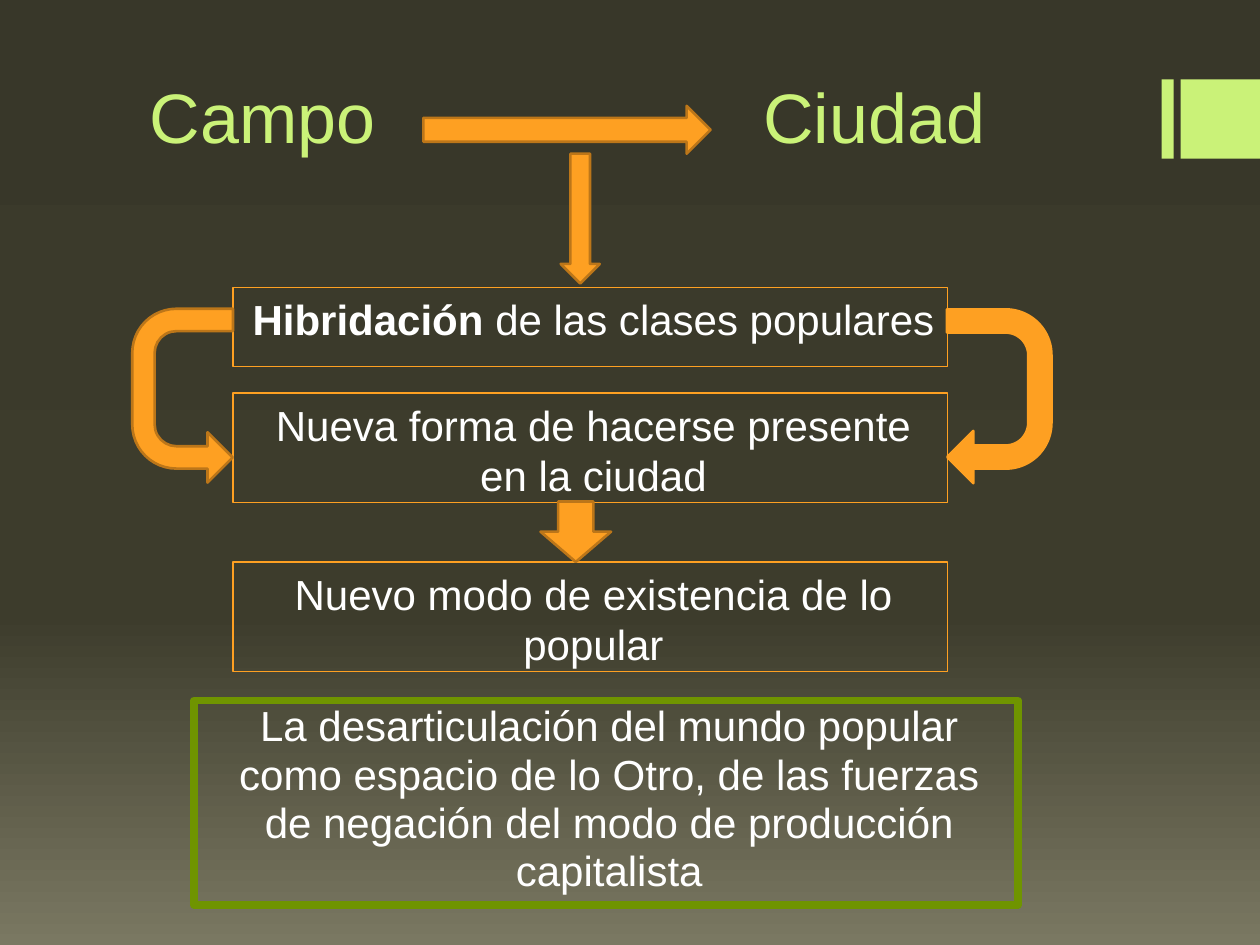
from copy import deepcopy

from pptx import Presentation
from pptx.dml.color import RGBColor
from pptx.enum.shapes import MSO_SHAPE as Shape
from pptx.enum.text import MSO_ANCHOR as Anchor, PP_ALIGN as Align
from pptx.oxml.ns import qn
from pptx.util import Inches, Pt

# Grid of 100 columns by 75 rows on a 10 x 7.5 inch slide
COLUMNS, ROWS = 100, 75
SLIDE_WIDTH, SLIDE_HEIGHT = Inches(10), Inches(7.5)

FONT = "Arial"
LIME = RGBColor(0xCA, 0xF2, 0x78)
ORANGE = RGBColor(0xFE, 0xA0, 0x22)
DARK_ORANGE = RGBColor(0xBC, 0x76, 0x19)
GREEN = RGBColor(0x6F, 0x94, 0x00)
WHITE = RGBColor(0xFF, 0xFF, 0xFF)
BACKGROUND_STOPS = [
    (0, RGBColor(0x38, 0x37, 0x29)),
    (0.65, RGBColor(0x3D, 0x3C, 0x2C)),
    (1, RGBColor(0x7A, 0x78, 0x62)),
]
UTURN_ADJUSTMENTS = (0.222, 0.25, 0.25, 0.438, 0.997)


def place(column, row, columns, rows):
    """Turn a grid area into left, top, width and height."""
    return (
        round(SLIDE_WIDTH * column / COLUMNS),
        round(SLIDE_HEIGHT * row / ROWS),
        round(SLIDE_WIDTH * columns / COLUMNS),
        round(SLIDE_HEIGHT * rows / ROWS),
    )


def paint_background(slide):
    fill = slide.background.fill
    fill.gradient()
    fill.gradient_angle = 270
    stop_list = slide.element.find(".//" + qn("a:gsLst"))
    stop_list.append(deepcopy(stop_list[-1]))
    for stop, (position, color) in zip(fill.gradient_stops, BACKGROUND_STOPS):
        stop.position = position
        stop.color.rgb = color


def add_shape(slide, kind, area, fill=None, line=None, line_width=1.5):
    shape = slide.shapes.add_shape(kind, *place(*area))
    shape.shadow.inherit = False
    if fill is None:
        shape.fill.background()
    else:
        shape.fill.solid()
        shape.fill.fore_color.rgb = fill
    if line is None:
        shape.line.fill.background()
    else:
        shape.line.color.rgb = line
        shape.line.width = Pt(line_width)
    return shape


def set_font(paragraph, size, color):
    paragraph.font.name = FONT
    paragraph.font.size = Pt(size)
    paragraph.font.color.rgb = color


def add_heading(slide, column, text):
    box = slide.shapes.add_textbox(*place(column, 2.9, 21.9, 10.1))
    frame = box.text_frame
    frame.word_wrap = True
    frame.vertical_anchor = Anchor.BOTTOM
    paragraph = frame.paragraphs[0]
    paragraph.text = text
    set_font(paragraph, 40, LIME)


def add_statement(slide, area, text, bold_start="", line=ORANGE, line_width=0.75):
    box = add_shape(slide, Shape.RECTANGLE, area, line=line, line_width=line_width)
    frame = box.text_frame
    frame.word_wrap = True
    frame.vertical_anchor = Anchor.TOP
    paragraph = frame.paragraphs[0]
    paragraph.alignment = Align.CENTER
    paragraph._p.get_or_add_pPr().set("marL", str(Inches(0.05)))
    set_font(paragraph, 24, WHITE)
    if bold_start:
        run = paragraph.add_run()
        run.text = bold_start
        run.font.bold = True
    paragraph.add_run().text = text
    return frame


def add_uturn(slide, area, line, flipped=False):
    arrow = add_shape(slide, Shape.U_TURN_ARROW, area, ORANGE, line)
    for index, value in enumerate(UTURN_ADJUSTMENTS):
        arrow.adjustments[index] = value
    arrow.rotation = 90
    if flipped:
        arrow.element.spPr.find(qn("a:xfrm")).set("flipV", "1")


def main():
    presentation = Presentation()
    presentation.slide_width, presentation.slide_height = SLIDE_WIDTH, SLIDE_HEIGHT
    slide = presentation.slides.add_slide(presentation.slide_layouts[6])
    paint_background(slide)

    # Marker at the right edge
    for column, columns in ((92.2, 0.95), (93.7, 6.3)):
        add_shape(slide, Shape.RECTANGLE, (column, 6.3, columns, 6.3), LIME)

    # Headings and the arrows that leave them
    add_heading(slide, 10.9, "Campo")
    add_heading(slide, 59.6, "Ciudad")
    add_shape(slide, Shape.RIGHT_ARROW, (33.6, 8.4, 22.8, 3.8), ORANGE, DARK_ORANGE)
    add_shape(slide, Shape.DOWN_ARROW, (44.5, 12.2, 3.1, 10.3), ORANGE, DARK_ORANGE)

    # Chain of statements
    add_statement(slide, (18.5, 22.8, 56.7, 6.3),
                  " de las clases populares", bold_start="Hibridación")
    add_statement(slide, (18.5, 31.2, 56.7, 8.7),
                  "Nueva forma de hacerse presente en la ciudad")
    add_uturn(slide, (72.4, 27.3, 13.8, 8.3), ORANGE)
    add_uturn(slide, (7.6, 27.4, 13.8, 8), DARK_ORANGE, flipped=True)
    add_statement(slide, (18.5, 44.6, 56.7, 8.7),
                  "Nuevo modo de existencia de lo popular")

    # Conclusion, set slightly tighter so that four lines stay inside the border
    conclusion = add_statement(
        slide, (15.4, 55.6, 65.4, 16.2),
        "La desarticulación del mundo popular como espacio de lo Otro, "
        "de las fuerzas de negación del modo de producción capitalista",
        line=GREEN, line_width=4.5)
    conclusion.margin_top = Inches(0.02)
    conclusion.paragraphs[0].line_spacing = 0.96
    add_shape(slide, Shape.DOWN_ARROW, (42.9, 39.8, 5.6, 4.8), ORANGE, DARK_ORANGE)

    presentation.save("out.pptx")


if __name__ == "__main__":
    main()
